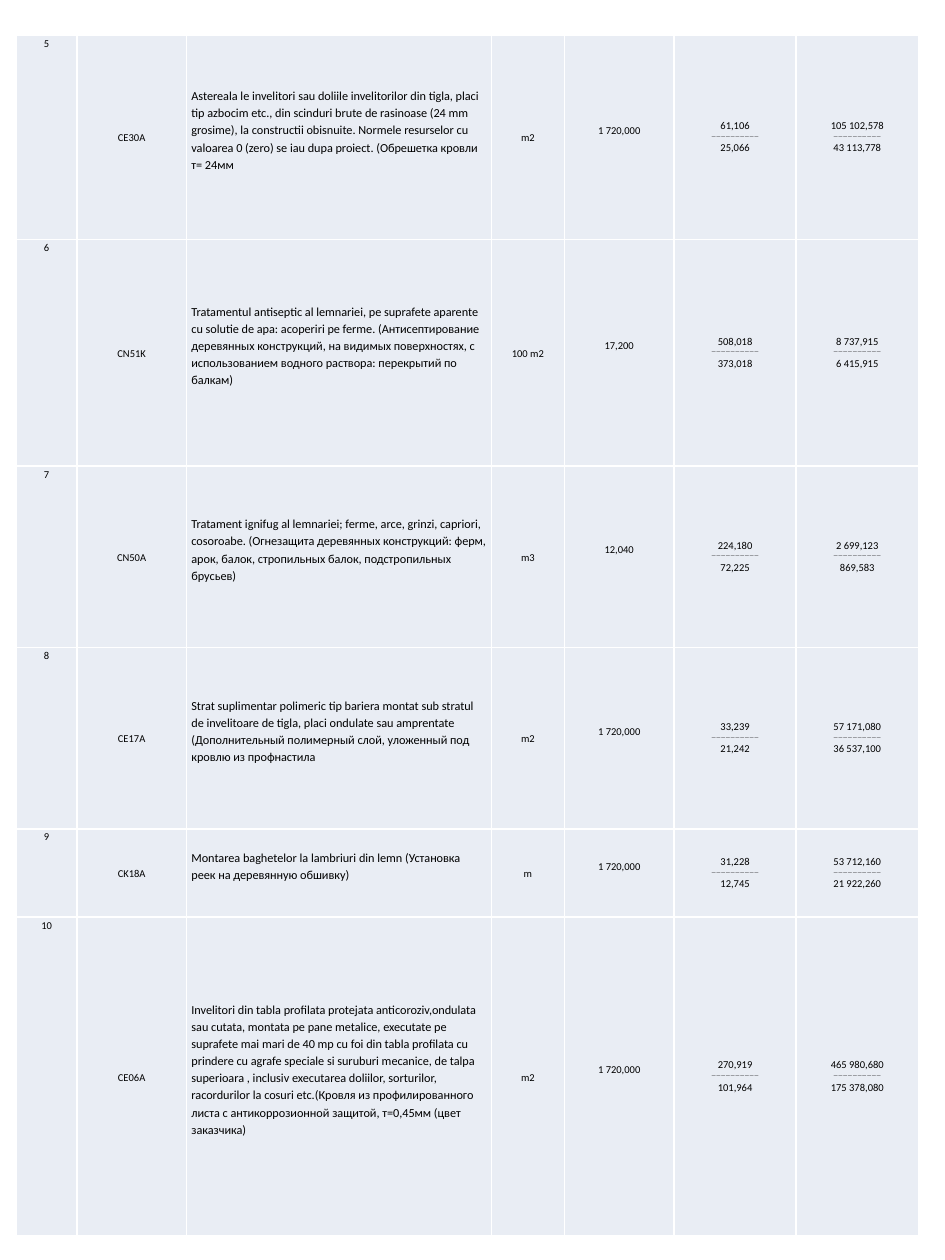
from dataclasses import dataclass

from lxml import etree
from pptx import Presentation, util as u
from pptx.dml.color import RGBColor
from pptx.enum import text
from pptx.oxml.ns import qn

COLORS = {"text": "000000", "cell": "E9EDF4", "border": "FFFFFF"}
FONT = "Calibri"
RULE = "—" * 10

# Grid of the table, in inches
LEFT, TOP = 0.13, 0.28
COLS = [0.48, 0.87, 2.42, 0.58, 0.87, 0.97, 0.97]
ROWS = [1.62, 1.8, 1.44, 1.44, 0.7, 2.53]


@dataclass
class Work:
    number: str
    code: str
    description: str
    unit: str
    quantity: str
    price: tuple[str, str]
    total: tuple[str, str]


@dataclass
class Column:
    field: str
    size: float = 6
    align: text.PP_ALIGN = text.PP_ALIGN.CENTER
    anchor: text.MSO_ANCHOR = text.MSO_ANCHOR.MIDDLE
    bottom: float = 0  # inset that lifts the text above the middle


COLUMNS = [
    Column("number", anchor=text.MSO_ANCHOR.TOP),
    Column("code"),
    Column("description", size=7, align=text.PP_ALIGN.LEFT, bottom=0.12),
    Column("unit"),
    Column("quantity", bottom=0.12),
    Column("price", bottom=0.02),
    Column("total", bottom=0.02),
]

WORKS = [
    Work("5", "CE30A",
         "Astereala le invelitori sau doliile invelitorilor din tigla, placi tip azbocim etc., "
         "din scinduri brute de rasinoase (24 mm grosime), la constructii obisnuite. Normele "
         "resurselor cu valoarea 0 (zero) se iau dupa proiect. (Обрешетка кровли т= 24мм",
         "m2", "1 720,000", ("61,106", "25,066"), ("105 102,578", "43 113,778")),
    Work("6", "CN51K",
         "Tratamentul antiseptic al lemnariei, pe suprafete aparente cu solutie de apa: "
         "acoperiri pe ferme. (Антисептирование деревянных конструкций, на видимых "
         "поверхностях, с использованием водного раствора: перекрытий по балкам)",
         "100 m2", "17,200", ("508,018", "373,018"), ("8 737,915", "6 415,915")),
    Work("7", "CN50A",
         "Tratament ignifug al lemnariei; ferme, arce, grinzi, capriori, cosoroabe. "
         "(Огнезащита деревянных конструкций: ферм, арок, балок, стропильных балок, "
         "подстропильных брусьев)",
         "m3", "12,040", ("224,180", "72,225"), ("2 699,123", "869,583")),
    Work("8", "CE17A",
         "Strat suplimentar polimeric tip bariera montat sub stratul de invelitoare de tigla, "
         "placi ondulate sau amprentate (Дополнительный полимерный слой, уложенный под "
         "кровлю из профнастила",
         "m2", "1 720,000", ("33,239", "21,242"), ("57 171,080", "36 537,100")),
    Work("9", "CK18A",
         "Montarea baghetelor la lambriuri din lemn (Установка реек на деревянную обшивку)",
         "m", "1 720,000", ("31,228", "12,745"), ("53 712,160", "21 922,260")),
    Work("10", "CE06A",
         "Invelitori din tabla profilata protejata anticoroziv,ondulata sau cutata, montata pe "
         "pane metalice, executate pe suprafete mai mari de 40 mp cu foi din tabla profilata "
         "cu prindere cu agrafe speciale si suruburi mecanice, de talpa superioara , inclusiv "
         "executarea doliilor, sorturilor, racordurilor la cosuri etc.(Кровля из "
         "профилированного листа с антикоррозионной защитой, т=0,45мм (цвет заказчика)",
         "m2", "1 720,000", ("270,919", "101,964"), ("465 980,680", "175 378,080")),
]


def set_borders(cell) -> None:
    """Draw all four sides of a cell; lines must come before the fill."""
    tc_pr = cell._tc.get_or_add_tcPr()
    for i, side in enumerate(("lnL", "lnR", "lnT", "lnB")):
        ln = etree.Element(qn(f"a:{side}"), w=str(u.Pt(1)))
        fill = etree.SubElement(ln, qn("a:solidFill"))
        etree.SubElement(fill, qn("a:srgbClr"), val=COLORS["border"])
        tc_pr.insert(i, ln)


def add_line(p, line: str, size: float, align: text.PP_ALIGN) -> None:
    p.alignment, p.line_spacing = align, 1.15
    r = p.add_run()
    r.text = line
    for name, value in {"name": FONT, "size": u.Pt(size), "bold": False}.items():
        setattr(r.font, name, value)
    r.font.color.rgb = RGBColor.from_string(COLORS["text"])


def fill_cell(cell, column: Column, value: str | tuple[str, str]) -> None:
    layout = {
        "margin_left": u.Inches(0.04), "margin_right": u.Inches(0.04),
        "margin_top": 0, "margin_bottom": u.Inches(column.bottom),
        "vertical_anchor": column.anchor,
    }
    for name, setting in layout.items():
        setattr(cell, name, setting)
    cell.fill.solid()
    cell.fill.fore_color.rgb = RGBColor.from_string(COLORS["cell"])
    set_borders(cell)

    # A pair of amounts is parted by a small rule
    if isinstance(value, tuple):
        lines = [(value[0], column.size), (RULE, 3), (value[1], column.size)]
    else:
        lines = [(value, column.size)]
    tf = cell.text_frame
    for i, (line, size) in enumerate(lines):
        p = tf.add_paragraph() if i else tf.paragraphs[0]
        add_line(p, line, size, column.align)


def add_estimate(s) -> None:
    table = s.shapes.add_table(
        len(ROWS), len(COLS), u.Inches(LEFT), u.Inches(TOP),
        u.Inches(sum(COLS)), u.Inches(sum(ROWS))).table
    table.first_row = table.horz_banding = False
    for col, width in zip(table.columns, COLS):
        col.width = u.Inches(width)
    for row, height, work in zip(table.rows, ROWS, WORKS):
        row.height = u.Inches(height)
        for cell, column in zip(row.cells, COLUMNS):
            fill_cell(cell, column, getattr(work, column.field))


def main() -> None:
    prs = Presentation()
    prs.slide_width, prs.slide_height = u.Inches(7.5), u.Inches(10)
    s = prs.slides.add_slide(prs.slide_layouts[6])
    add_estimate(s)
    prs.save("out.pptx")


if __name__ == "__main__":
    main()
